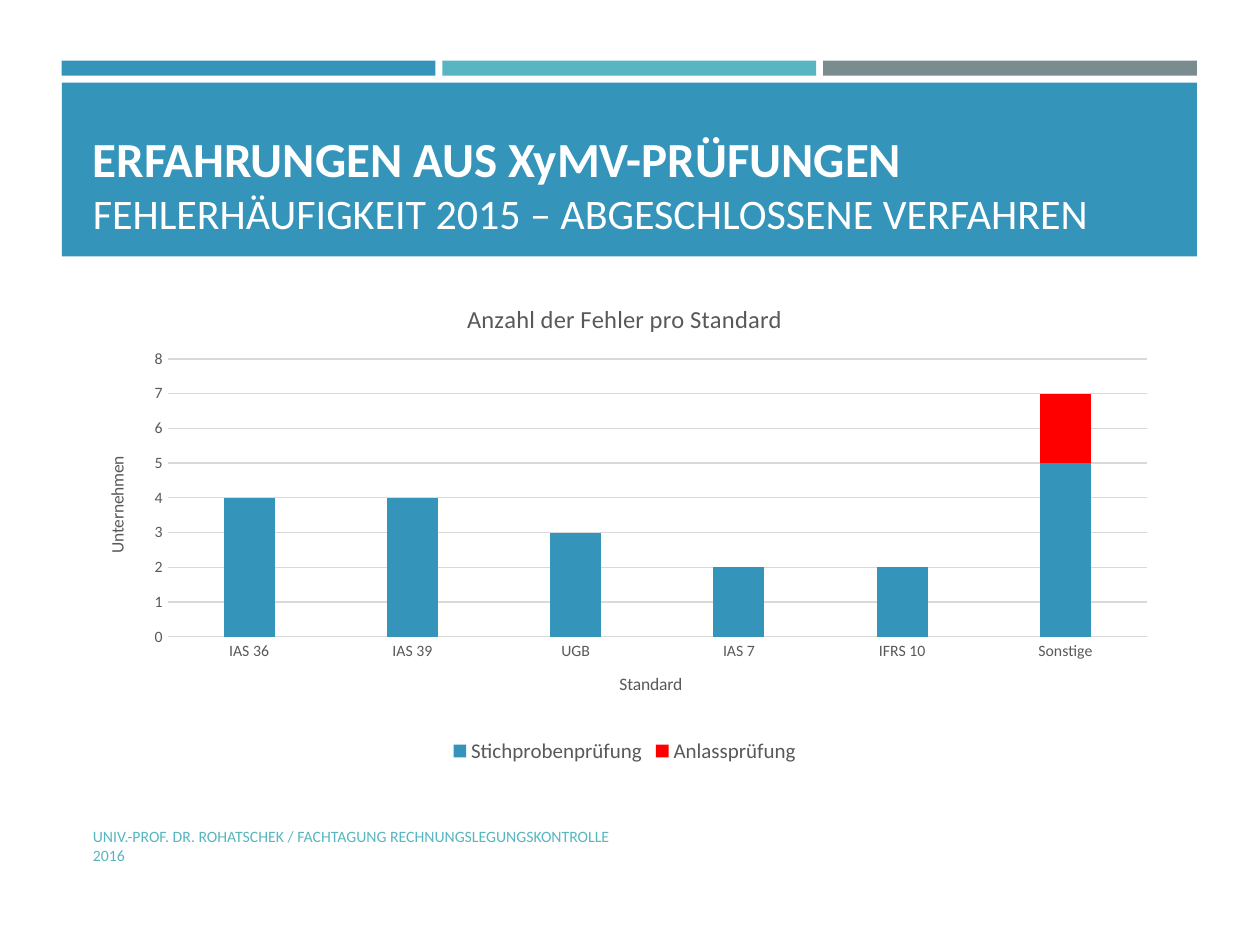
from pptx import Presentation
from pptx.chart.data import CategoryChartData
from pptx.dml.color import RGBColor
from pptx.enum.chart import XL_CHART_TYPE, XL_LEGEND_POSITION, XL_TICK_MARK
from pptx.enum.shapes import MSO_SHAPE
from pptx.enum.text import MSO_ANCHOR
from pptx.oxml import parse_xml
from pptx.oxml.ns import nsdecls
from pptx.util import Pt

BLUE, TEAL, GRAY = "3494BA", "58B6C0", "7A8C8E"
WHITE, RED, DARK, PALE = "FFFFFF", "FF0000", "595959", "D9D9D9"
LEFT, WIDTH, GAP = 35.3, 648.7, 4


def paint(target, color):
    target.solid()
    target.fore_color.rgb = RGBColor.from_string(color)


def style(font, size, color, bold=False):
    font.name = "Calibri"
    font.size = Pt(size)
    font.bold = bold
    font.color.rgb = RGBColor.from_string(color)


def add_bar(slide, left, top, width, height, color):
    box = [Pt(n) for n in (left, top, width, height)]
    bar = slide.shapes.add_shape(MSO_SHAPE.RECTANGLE, *box)
    bar.shadow.inherit = False
    paint(bar.fill, color)
    bar.line.fill.background()


def add_text(slide, left, top, width, height, lines, anchor):
    box = [Pt(n) for n in (left, top, width, height)]
    frame = slide.shapes.add_textbox(*box).text_frame
    frame.word_wrap = True
    frame.vertical_anchor = anchor
    frame.margin_bottom = Pt(3)
    for index, (text, size, color, bold) in enumerate(lines):
        para = frame.add_paragraph() if index else frame.paragraphs[0]
        para.text = text
        style(para.font, size, color, bold)


def set_title(owner, text, size):
    frame = owner.text_frame
    frame.text = text
    style(frame.paragraphs[0].font, size, DARK)


def set_axis(axis, title):
    set_title(axis.axis_title, title, 10)
    axis.major_tick_mark = axis.minor_tick_mark = XL_TICK_MARK.NONE
    style(axis.tick_labels.font, 9, DARK)


def set_line(line):
    paint(line.fill, PALE)
    line.width = Pt(0.75)


def set_plot(chart, left, top, width, height):
    area = chart.plots[0]._element.getparent()
    for old in area.findall("{*}layout"):
        area.remove(old)
    area.insert(0, parse_xml(
        f'<c:layout {nsdecls("c")}><c:manualLayout><c:layoutTarget val="inner"/>'
        '<c:xMode val="edge"/><c:yMode val="edge"/>'
        f'<c:x val="{left}"/><c:y val="{top}"/><c:w val="{width}"/><c:h val="{height}"/>'
        '</c:manualLayout></c:layout>'))


def add_chart(slide, left, top, width, height):
    data = CategoryChartData()
    data.categories = ["IAS 36", "IAS 39", "UGB", "IAS 7", "IFRS 10", "Sonstige"]
    data.add_series("Stichprobenprüfung", [4, 4, 3, 2, 2, 5])
    data.add_series("Anlassprüfung", [0, 0, 0, 0, 0, 2])
    box = [Pt(n) for n in (left, top, width, height)]
    chart = slide.shapes.add_chart(XL_CHART_TYPE.COLUMN_STACKED, *box, data).chart
    style(chart.font, 10, DARK)
    set_title(chart.chart_title, "Anzahl der Fehler pro Standard", 14)
    chart.chart_title.include_in_layout = False

    plot = chart.plots[0]
    plot.gap_width, plot.overlap = 219, 100
    plot.vary_by_categories = False
    for series, color in zip(plot.series, (BLUE, RED)):
        paint(series.format.fill, color)

    set_axis(chart.category_axis, "Standard")
    set_line(chart.category_axis.format.line)
    value = chart.value_axis
    set_axis(value, "Unternehmen")
    value.minimum_scale, value.maximum_scale, value.major_unit = 0, 8, 1
    value.format.line.fill.background()
    set_line(value.major_gridlines.format.line)

    chart.has_legend = True
    chart.legend.position = XL_LEGEND_POSITION.BOTTOM
    chart.legend.include_in_layout = False
    style(chart.legend.font, 12, DARK)
    set_plot(chart, 0.08, 0.16, 0.9, 0.57)


def main():
    deck = Presentation()
    deck.slide_width, deck.slide_height = Pt(720), Pt(540)
    slide = deck.slides.add_slide(deck.slide_layouts[6])

    part = (WIDTH - 2 * GAP) / 3
    for index, color in enumerate((BLUE, TEAL, GRAY)):
        add_bar(slide, LEFT + index * (part + GAP), 34.6, part, 8.6, color)
    add_bar(slide, LEFT, 47.3, WIDTH, 99.2, BLUE)

    add_text(slide, 46, 54, 642, 85, [
        ("ERFAHRUNGEN AUS XyMV-PRÜFUNGEN", 28, WHITE, True),
        ("FEHLERHÄUFIGKEIT 2015 – ABGESCHLOSSENE VERFAHREN", 24, WHITE, False),
    ], MSO_ANCHOR.BOTTOM)
    add_chart(slide, 46, 160.6, 622, 278.6)
    add_text(slide, 46, 468.4, 313.2, 28.8, [
        ("UNIV.-PROF. DR. ROHATSCHEK / FACHTAGUNG RECHNUNGSLEGUNGSKONTROLLE 2016",
         9, TEAL, False),
    ], MSO_ANCHOR.MIDDLE)
    deck.save("out.pptx")


if __name__ == "__main__":
    main()
